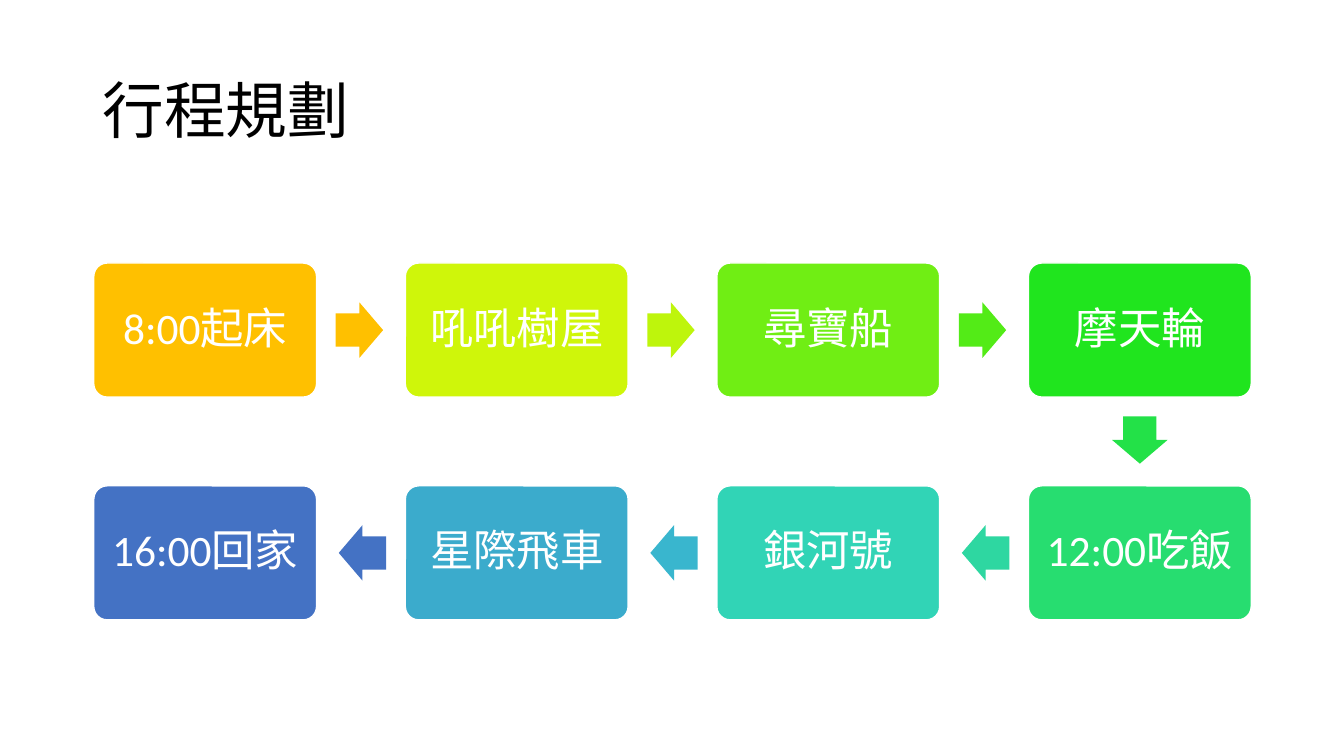
from pptx import Presentation
from pptx.dml.color import RGBColor
from pptx.enum.shapes import MSO_SHAPE as Shape
from pptx.enum.text import MSO_ANCHOR as Anchor, PP_ALIGN as Align
from pptx.util import Inches, Pt

FONT = "Calibri"
COLORS = {"title": "000000", "white": "FFFFFF"}
# Stop, card colour, colour of the arrow to the next stop
STOPS = [
    ("8:00起床", "FFC000", "FFC000"),
    ("吼吼樹屋", "CFF60A", "BEF50C"),
    ("尋寶船", "70EE14", "53EB17"),
    ("摩天輪", "20E51E", "23E148"),
    ("12:00吃飯", "27DD70", "2ED7A1"),
    ("銀河號", "31D4B6", "39B6CE"),
    ("星際飛車", "3BABCC", "4472C4"),
    ("16:00回家", "4472C4", None),
]
COLUMNS = 4
LEFT, TOP = 0.93, 2.61
COLUMN_STEP, ROW_STEP = 3.09, 2.21
CARD_WIDTH, CARD_HEIGHT = 2.21, 1.33
ARROW_WIDTH, ARROW_HEIGHT = 0.47, 0.55
# Arrow centre relative to the card centre, by rotation
ARROW_OFFSETS = {0: (1.53, 0), 90: (0, 1.09), 180: (-1.53, 0)}


def rgb(value):
    return RGBColor.from_string(value)


def write(frame, text, size, color, align):
    frame.word_wrap = True
    frame.vertical_anchor = Anchor.MIDDLE
    paragraph = frame.paragraphs[0]
    paragraph.text = text
    paragraph.alignment = align
    paragraph.line_spacing = 0.9
    paragraph.font.name = FONT
    paragraph.font.size = Pt(size)
    paragraph.font.color.rgb = rgb(color)


def add_title(slide, text):
    title = slide.shapes.add_textbox(
        Inches(0.92), Inches(0.4), Inches(11.5), Inches(1.45))
    write(title.text_frame, text, 44, COLORS["title"], Align.LEFT)


def add_filled(slide, kind, center_x, center_y, width, height, color):
    """Add a shadowless, borderless preset shape around a centre point."""
    shape = slide.shapes.add_shape(
        kind, Inches(center_x - width / 2), Inches(center_y - height / 2),
        Inches(width), Inches(height))
    shape.shadow.inherit = False
    shape.fill.solid()
    shape.fill.fore_color.rgb = rgb(color)
    shape.line.fill.background()
    return shape


def add_card(slide, x, y, text, color):
    card = add_filled(slide, Shape.ROUNDED_RECTANGLE, x, y,
                      CARD_WIDTH, CARD_HEIGHT, color)
    card.adjustments[0] = 0.1
    card.line.color.rgb = rgb(COLORS["white"])
    card.line.width = Pt(1)
    frame = card.text_frame
    frame.margin_left = frame.margin_right = Inches(0.13)
    frame.margin_top = frame.margin_bottom = Inches(0.13)
    write(frame, text, 31, COLORS["white"], Align.CENTER)


def add_arrow(slide, x, y, rotation, color):
    dx, dy = ARROW_OFFSETS[rotation]
    arrow = add_filled(slide, Shape.RIGHT_ARROW, x + dx, y + dy,
                       ARROW_WIDTH, ARROW_HEIGHT, color)
    arrow.adjustments[0] = 0.6
    arrow.adjustments[1] = 0.5
    arrow.rotation = rotation


def add_route(slide):
    """Lay the stops out rightwards, then back leftwards on the next row."""
    for index, (text, card_color, arrow_color) in enumerate(STOPS):
        row, step = divmod(index, COLUMNS)
        column = COLUMNS - 1 - step if row else step
        x = LEFT + column * COLUMN_STEP + CARD_WIDTH / 2
        y = TOP + row * ROW_STEP + CARD_HEIGHT / 2
        add_card(slide, x, y, text, card_color)
        if arrow_color:
            turning = step == COLUMNS - 1
            add_arrow(slide, x, y, 90 if turning else 180 * row, arrow_color)


def main():
    deck = Presentation()
    deck.slide_width, deck.slide_height = Inches(13.33), Inches(7.5)
    slide = deck.slides.add_slide(deck.slide_layouts[6])
    add_title(slide, "行程規劃")
    add_route(slide)
    deck.save("out.pptx")


if __name__ == "__main__":
    main()
